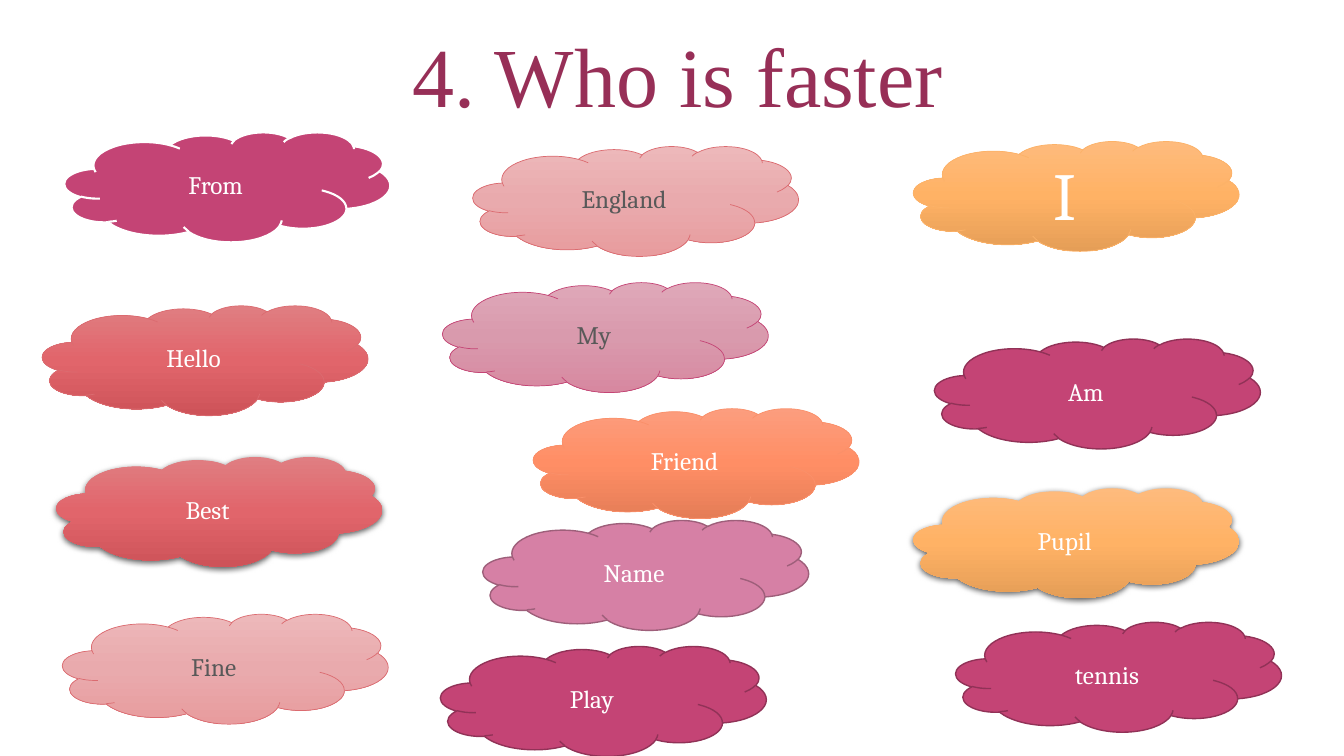
"""Build the "Who is faster" slide: a title above thirteen word clouds."""
import copy

import lxml.etree
import pptx
import pptx.dml.color
import pptx.enum.shapes
import pptx.enum.text
import pptx.oxml.ns
import pptx.util

RGBColor = pptx.dml.color.RGBColor
qn = pptx.oxml.ns.qn
PX = 9144

WHITE = RGBColor(0xFF, 0xFF, 0xFF)
GRAY = RGBColor(0x59, 0x59, 0x59)
PLUM = RGBColor(0x97, 0x2F, 0x57)
DARK_PLUM = RGBColor(0x91, 0x32, 0x57)
MAGENTA = RGBColor(0xC4, 0x44, 0x75)
ORCHID = RGBColor(0xD6, 0x80, 0xA5)
MAUVE = RGBColor(0x9E, 0x5F, 0x7A)
RED = RGBColor(0xDB, 0x6B, 0x70)
AMBER = RGBColor(0xFC, 0xB2, 0x68)
CORAL = RGBColor(0xFA, 0x90, 0x6A)

PINK_FADE = [RGBColor(0xED, 0xB8, 0xBA), RGBColor(0xE9, 0xAA, 0xAD), RGBColor(0xE8, 0x9C, 0x9E)]
ROSE_FADE = [RGBColor(0xDF, 0xA8, 0xB9), RGBColor(0xD9, 0x9A, 0xAD), RGBColor(0xD7, 0x88, 0xA0)]
RED_FADE = [RGBColor(0xE0, 0x7E, 0x82), RGBColor(0xE1, 0x65, 0x6B), RGBColor(0xCE, 0x53, 0x59)]
AMBER_FADE = [RGBColor(0xFE, 0xBB, 0x7D), RGBColor(0xFF, 0xB2, 0x65), RGBColor(0xE5, 0x9E, 0x57)]
CORAL_FADE = [RGBColor(0xFC, 0x9D, 0x7E), RGBColor(0xFF, 0x8E, 0x65), RGBColor(0xE5, 0x7D, 0x57)]

STYLES = {
    "pink": (PINK_FADE, RED, 0.5, GRAY),
    "rose": (ROSE_FADE, MAGENTA, 0.5, GRAY),
    "red": (RED_FADE, RED, 0.5, WHITE),
    "amber": (AMBER_FADE, AMBER, 0.5, WHITE),
    "coral": (CORAL_FADE, CORAL, 0.5, WHITE),
    "raised red": (RED_FADE, None, 0, WHITE),
    "raised amber": (AMBER_FADE, None, 0, WHITE),
    "magenta": (MAGENTA, DARK_PLUM, 1, WHITE),
    "white edge": (MAGENTA, WHITE, 1.5, WHITE),
    "orchid": (ORCHID, MAUVE, 1, WHITE),
}

CLOUD_WIDTH, CLOUD_HEIGHT = 323, 109
CLOUDS = [
    ("England", 469, 145, "pink", 18),
    ("Fine", 62, 609, "pink", 18),
    ("Pupil", 906, 484, "raised amber", 18),
    ("Am", 927, 336, "magenta", 18),
    ("I", 906, 140, "amber", 48),
    ("From", 64, 131, "white edge", 18),
    ("Hello", 42, 303, "red", 18),
    ("Name", 479, 516, "orchid", 18),
    ("My", 439, 280, "rose", 18),
    ("Play", 437, 641, "magenta", 18),
    ("tennis", 948, 617, "magenta", 18),
    ("Friend", 529, 405, "coral", 18),
    ("Best", 56, 453, "raised red", 18),
]


def write_text(frame, text, font_name, size, color):
    frame.word_wrap = True
    para = frame.paragraphs[0]
    para.text = text
    para.alignment = pptx.enum.text.PP_ALIGN.CENTER
    para.font.name = font_name
    para.font.size = pptx.util.Pt(size)
    para.font.color.rgb = color
    return para


def fill_gradient(shape, colors):
    shape.fill.gradient()
    shape.fill.gradient_angle = 270
    stop_list = shape._element.spPr.find(".//" + qn("a:gsLst"))
    stop_list.insert(1, copy.deepcopy(stop_list[0]))
    for index, stop in enumerate(shape.fill.gradient_stops):
        stop.position = index / 2
        stop.color.rgb = colors[index]


deck = pptx.Presentation()
deck.slide_width, deck.slide_height = 1333 * PX, 750 * PX
page = deck.slides.add_slide(deck.slide_layouts[6])

title = page.shapes.add_textbox(122 * PX, 0, 1100 * PX, 130 * PX)
title.text_frame.vertical_anchor = pptx.enum.text.MSO_ANCHOR.BOTTOM
heading = write_text(title.text_frame, "4. Who is faster", "Times New Roman", 60, PLUM)
heading.line_spacing = 0.9

for word, left, top, style, size in CLOUDS:
    fill, edge, edge_width, text_color = STYLES[style]
    cloud = page.shapes.add_shape(
        pptx.enum.shapes.MSO_SHAPE.CLOUD,
        left * PX, top * PX, CLOUD_WIDTH * PX, CLOUD_HEIGHT * PX)
    cloud.shadow.inherit = False
    if isinstance(fill, list):
        fill_gradient(cloud, fill)
    else:
        cloud.fill.solid()
        cloud.fill.fore_color.rgb = fill
    if edge is None:
        cloud.line.fill.background()
        effects = cloud._element.spPr.find(qn("a:effectLst"))
        shadow = lxml.etree.SubElement(
            effects, qn("a:outerShdw"), blurRad=str(pptx.util.Pt(4.5)),
            dist=str(pptx.util.Pt(1.5)), dir="5400000", algn="ctr", rotWithShape="0")
        black = lxml.etree.SubElement(shadow, qn("a:srgbClr"), val="000000")
        lxml.etree.SubElement(black, qn("a:alpha"), val="63000")
    else:
        cloud.line.color.rgb = edge
        cloud.line.width = pptx.util.Pt(edge_width)
    cloud.text_frame.vertical_anchor = pptx.enum.text.MSO_ANCHOR.MIDDLE
    write_text(cloud.text_frame, word, "Cambria", size, text_color)

deck.save("out.pptx")
